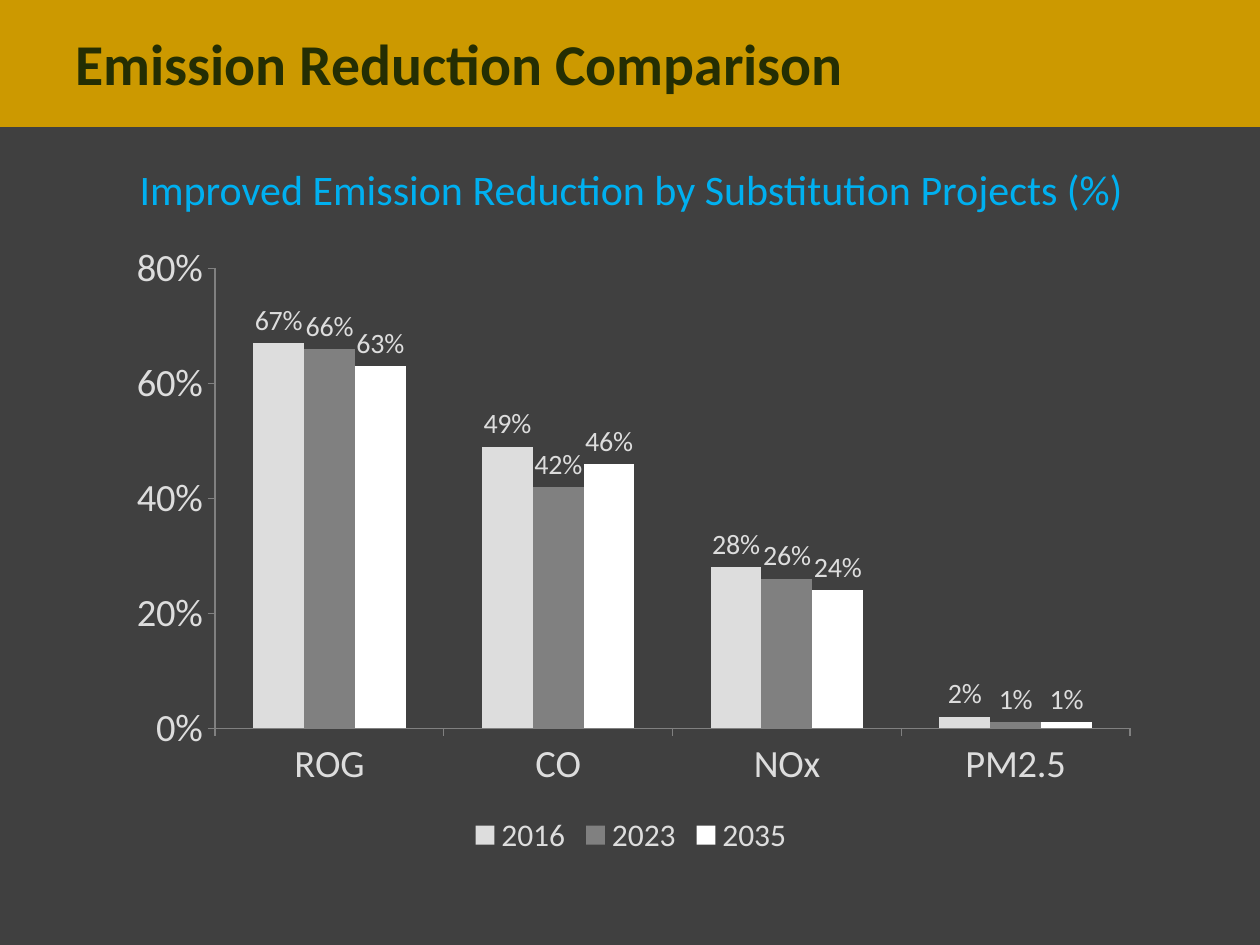
import pptx
import pptx.chart.data
import pptx.dml.color
import pptx.enum.chart
import pptx.enum.text
import pptx.oxml
import pptx.util
from lxml import etree
from pptx.oxml.ns import nsdecls, qn
from pptx.util import Cm, Pt

FONT = "Calibri"
LIGHT, GREY, WHITE = "DDDDDD", "808080", "FFFFFF"
GOLD, CHARCOAL = "CC9900", "404040"


def colour(code):
    return pptx.dml.color.RGBColor.from_string(code)


class SlideBuilder:
    def __init__(self, deck, background):
        self.page = deck.slides.add_slide(deck.slide_layouts[6])
        fill = self.page.background.fill
        fill.solid()
        fill.fore_color.rgb = colour(background)

    def style_font(self, font, size, code, bold=False):
        font.name = FONT
        font.size = Pt(size)
        font.bold = bold
        font.color.rgb = colour(code)

    def band(self, left, top, width, height, code):
        shape = self.page.shapes.add_shape(
            pptx.enum.shapes.MSO_SHAPE.RECTANGLE, left, top, width, height)
        shape.shadow.inherit = False
        shape.fill.solid()
        shape.fill.fore_color.rgb = colour(code)
        shape.line.color.rgb = colour(code)
        shape.line.width = Pt(0.75)

    def text(self, left, top, width, height, words, size, code, outline,
             bold=False, align=pptx.enum.text.PP_ALIGN.LEFT):
        """Add one line of text with a faint outline round its letters."""
        box = self.page.shapes.add_textbox(left, top, width, height)
        box.text_frame.word_wrap = True
        para = box.text_frame.paragraphs[0]
        para.alignment = align
        span = para.add_run()
        span.text = words
        self.style_font(span.font, size, code, bold)
        span.font._element.insert(0, pptx.oxml.parse_xml(
            f'<a:ln {nsdecls("a")} w="{Pt(0.75)}"><a:solidFill>'
            f'<a:srgbClr val="{outline}"><a:alpha val="20000"/></a:srgbClr>'
            '</a:solidFill></a:ln>'))

    def column_chart(self, left, top, width, height, categories, series, plot_area):
        """Add clustered columns; series maps a name to (colour, values)."""
        data = pptx.chart.data.CategoryChartData(number_format="0%")
        data.categories = categories
        for name, (_, values) in series.items():
            data.add_series(name, values)
        chart = self.page.shapes.add_chart(
            pptx.enum.chart.XL_CHART_TYPE.COLUMN_CLUSTERED,
            left, top, width, height, data).chart
        self.style_font(chart.font, 22, LIGHT)
        chart.has_title = False
        chart.has_legend = True
        chart.legend.position = pptx.enum.chart.XL_LEGEND_POSITION.BOTTOM
        chart.legend.include_in_layout = False
        self.style_font(chart.legend.font, 18, LIGHT)

        for axis in (chart.category_axis, chart.value_axis):
            axis.has_major_gridlines = False
            axis.major_tick_mark = pptx.enum.chart.XL_TICK_MARK.OUTSIDE
            axis.format.line.color.rgb = colour(GREY)
            axis.format.line.width = Pt(0.75)
            self.style_font(axis.tick_labels.font, 22, LIGHT)
        chart.value_axis.minimum_scale = 0
        chart.value_axis.maximum_scale = 0.8
        chart.value_axis.major_unit = 0.2
        chart.value_axis.tick_labels.number_format = "0%"
        chart.value_axis.tick_labels.number_format_is_linked = False

        plot = chart.plots[0]
        plot.gap_width = 150
        plot.overlap = 0
        plot.vary_by_categories = False
        for columns, (code, _) in zip(plot.series, series.values()):
            columns.format.fill.solid()
            columns.format.fill.fore_color.rgb = colour(code)
            labels = columns.data_labels
            labels.show_value = True
            labels.number_format = "0%"
            labels.number_format_is_linked = False
            labels.position = pptx.enum.chart.XL_LABEL_POSITION.OUTSIDE_END
            self.style_font(labels.font, 16, LIGHT)
        self.place_plot(chart, plot_area)

    def place_plot(self, chart, plot_area):
        """Fix the inner plot area, given as fractions of the chart: x, y, w, h."""
        area = chart._chartSpace.find(".//" + qn("c:plotArea"))
        for old in area.findall(qn("c:layout")):
            area.remove(old)
        layout = etree.Element(qn("c:layout"))
        manual = etree.SubElement(layout, qn("c:manualLayout"))
        settings = [("layoutTarget", "inner"), ("xMode", "edge"), ("yMode", "edge")]
        for tag, value in settings + list(zip("xywh", plot_area)):
            etree.SubElement(manual, qn("c:" + tag)).set("val", str(value))
        area.insert(0, layout)


def main():
    deck = pptx.Presentation()
    deck.slide_width, deck.slide_height = Cm(25.4), Cm(19.05)
    builder = SlideBuilder(deck, CHARCOAL)
    builder.band(0, 0, deck.slide_width, Cm(2.54), GOLD)
    builder.text(Cm(0.56), Cm(3.18), Cm(24.33), Cm(1.32),
                 "Improved Emission Reduction by Substitution Projects (%)",
                 24, "00B0F0", "000000", align=pptx.enum.text.PP_ALIGN.CENTER)
    builder.text(Cm(1.27), Cm(0.43), Cm(24.13), Cm(1.9),
                 "Emission Reduction Comparison", 33, "242E03", "FFCC66", bold=True)
    builder.column_chart(
        Cm(2.24), Cm(4.65), Cm(20.96), Cm(12.7),
        ["ROG", "CO", "NOx", "PM2.5"],
        {"2016": (LIGHT, [0.67, 0.49, 0.28, 0.02]),
         "2023": (GREY, [0.66, 0.42, 0.26, 0.01]),
         "2035": (WHITE, [0.63, 0.46, 0.24, 0.01])},
        plot_area=(0.1, 0.06, 0.88, 0.73))
    deck.save("out.pptx")


if __name__ == "__main__":
    main()
